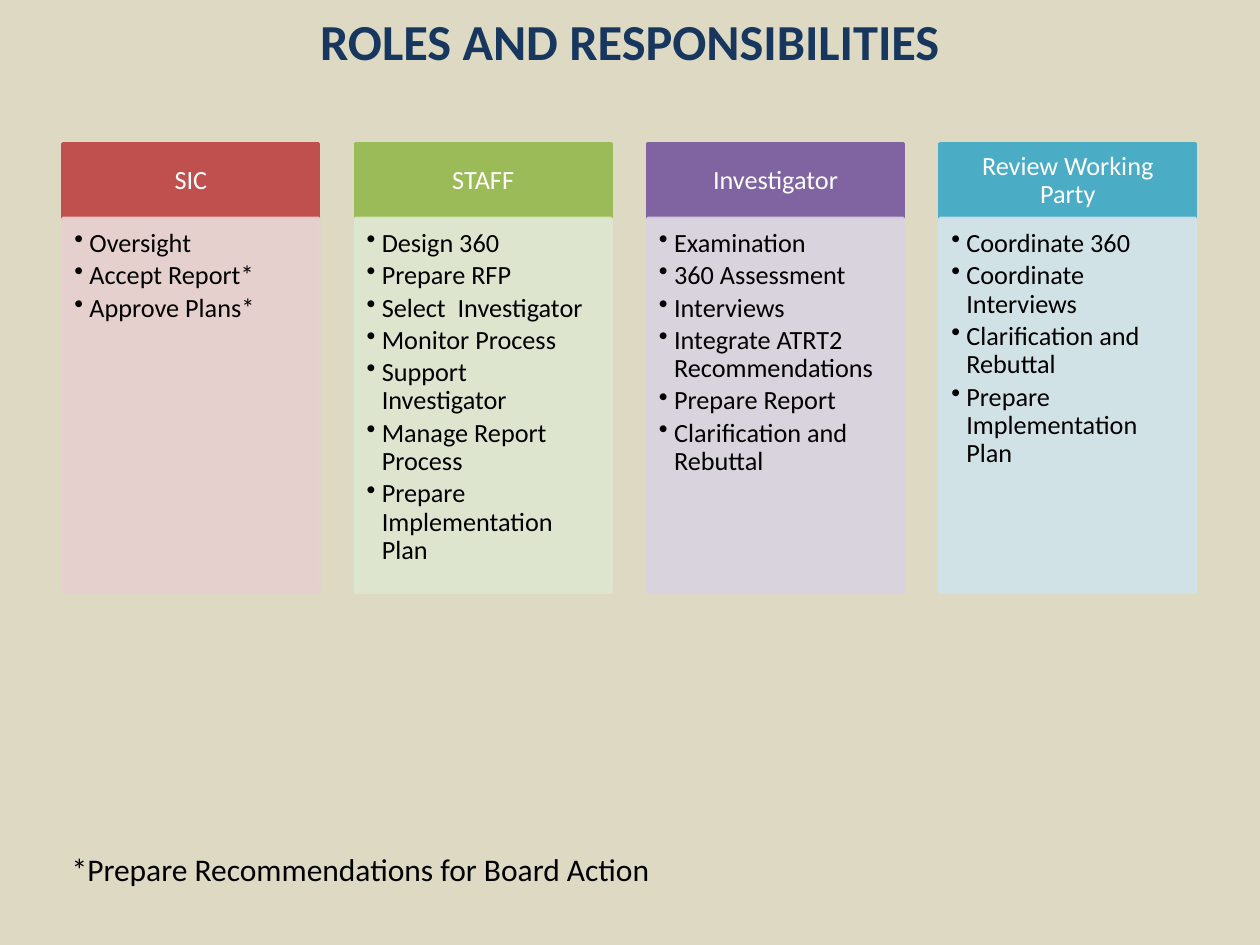
import pptx
import pptx.dml.color
import pptx.enum.shapes
import pptx.enum.text
import pptx.oxml.ns
import pptx.util
from lxml import etree

RGBColor = pptx.dml.color.RGBColor
Inches = pptx.util.Inches
Pt = pptx.util.Pt
Align = pptx.enum.text.PP_ALIGN
Anchor = pptx.enum.text.MSO_ANCHOR
qn = pptx.oxml.ns.qn

SLIDE_WIDTH, SLIDE_HEIGHT = 10, 7.5
FONT = "Calibri"
BACKGROUND = RGBColor(0xDD, 0xD9, 0xC3)
NAVY = RGBColor(0x17, 0x37, 0x5E)
BLACK = RGBColor(0x00, 0x00, 0x00)
WHITE = RGBColor(0xFF, 0xFF, 0xFF)
RED, PALE_RED = RGBColor(0xC0, 0x50, 0x4D), RGBColor(0xE8, 0xD0, 0xD0)
GREEN, PALE_GREEN = RGBColor(0x9B, 0xBB, 0x59), RGBColor(0xDE, 0xE7, 0xD1)
PURPLE, PALE_PURPLE = RGBColor(0x80, 0x64, 0xA2), RGBColor(0xD8, 0xD3, 0xE0)
TEAL, PALE_TEAL = RGBColor(0x4B, 0xAC, 0xC6), RGBColor(0xD0, 0xE3, 0xEA)

TITLE_BOX = (0.5, 0.03, 9, 0.58)
ROLES_BOX = (0.5, 1.14, 8.99, 3.56)
FOOTNOTE_BOX = (0.47, 6.7, 8.84, 0.71)
COLUMN_GAP = 0.29
HEADER_SHARE = 1 / 6
BULLET_INDENT = 0.12

ROLES = [
    ("SIC", RED, PALE_RED, ["Oversight", "Accept Report*", "Approve Plans*"]),
    ("STAFF", GREEN, PALE_GREEN, [
        "Design 360", "Prepare RFP", "Select  Investigator", "Monitor Process",
        "Support Investigator", "Manage Report Process",
        "Prepare Implementation Plan"]),
    ("Investigator", PURPLE, PALE_PURPLE, [
        "Examination", "360 Assessment", "Interviews",
        "Integrate ATRT2 Recommendations", "Prepare Report",
        "Clarification and Rebuttal"]),
    ("Review Working Party", TEAL, PALE_TEAL, [
        "Coordinate 360", "Coordinate Interviews",
        "Clarification and Rebuttal", "Prepare Implementation Plan"]),
]


def format_text(text_frame, size, color, alignment, bold=False):
    for paragraph in text_frame.paragraphs:
        paragraph.alignment = alignment
        for run in paragraph.runs:
            run.font.name = FONT
            run.font.size = Pt(size)
            run.font.bold = bold
            run.font.color.rgb = color


def set_margins(text_frame, left, top, right, bottom):
    text_frame.margin_left, text_frame.margin_top = Inches(left), Inches(top)
    text_frame.margin_right, text_frame.margin_bottom = Inches(right), Inches(bottom)


def add_panel(slide, box, color, text):
    panel = slide.shapes.add_shape(
        pptx.enum.shapes.MSO_SHAPE.RECTANGLE, *map(Inches, box))
    panel.shadow.inherit = False
    panel.fill.solid()
    panel.fill.fore_color.rgb = color
    panel.line.color.rgb = color
    panel.line.width = Pt(2)
    panel.text_frame.word_wrap = True
    panel.text_frame.text = text
    for paragraph in panel.text_frame.paragraphs:
        paragraph.line_spacing = 0.9
    return panel


def make_translucent(shape, percent):
    for color in shape.element.spPr.iter(qn("a:srgbClr")):
        etree.SubElement(color, qn("a:alpha"), val=str(percent * 1000))


def add_bullet(paragraph):
    properties = paragraph._p.get_or_add_pPr()
    properties.set("marL", str(Inches(BULLET_INDENT)))
    properties.set("indent", str(-Inches(BULLET_INDENT)))
    etree.SubElement(properties, qn("a:buChar"), char="•")


def add_role(slide, box, name, color, pale_color, duties):
    left, top, width, height = box
    header_height = height * HEADER_SHARE
    header = add_panel(slide, (left, top, width, header_height), color, name)
    header.text_frame.vertical_anchor = Anchor.MIDDLE
    set_margins(header.text_frame, 0.12, 0.07, 0.12, 0.07)
    format_text(header.text_frame, 15, WHITE, Align.CENTER)

    body_box = (left, top + header_height, width, height - header_height)
    body = add_panel(slide, body_box, pale_color, "\n".join(duties))
    make_translucent(body, 90)
    body.text_frame.vertical_anchor = Anchor.TOP
    set_margins(body.text_frame, 0.09, 0.09, 0.12, 0.13)
    format_text(body.text_frame, 15, BLACK, Align.LEFT)
    for paragraph in body.text_frame.paragraphs:
        paragraph.space_after = Pt(2.25)
        add_bullet(paragraph)


def add_roles(slide, box):
    left, top, width, height = box
    column_width = (width - COLUMN_GAP * (len(ROLES) - 1)) / len(ROLES)
    for index, role in enumerate(ROLES):
        column_left = left + index * (column_width + COLUMN_GAP)
        add_role(slide, (column_left, top, column_width, height), *role)


def set_title(slide, box):
    title = slide.shapes.title
    title.left, title.top, title.width, title.height = map(Inches, box)
    title.text_frame.text = "ROLES AND RESPONSIBILITIES"
    title.text_frame.auto_size = pptx.enum.text.MSO_AUTO_SIZE.NONE
    title.text_frame.vertical_anchor = Anchor.MIDDLE
    format_text(title.text_frame, 28.8, NAVY, Align.CENTER, bold=True)


def add_footnote(slide, box):
    footnote = slide.shapes.add_textbox(*map(Inches, box))
    footnote.text_frame.word_wrap = True
    footnote.text_frame.text = "*Prepare Recommendations for Board Action"
    format_text(footnote.text_frame, 18, BLACK, Align.LEFT)


def main():
    presentation = pptx.Presentation()
    presentation.slide_width = Inches(SLIDE_WIDTH)
    presentation.slide_height = Inches(SLIDE_HEIGHT)
    slide = presentation.slides.add_slide(
        presentation.slide_layouts.get_by_name("Title Only"))
    slide.background.fill.solid()
    slide.background.fill.fore_color.rgb = BACKGROUND
    set_title(slide, TITLE_BOX)
    add_footnote(slide, FOOTNOTE_BOX)
    add_roles(slide, ROLES_BOX)
    presentation.save("out.pptx")


if __name__ == "__main__":
    main()
